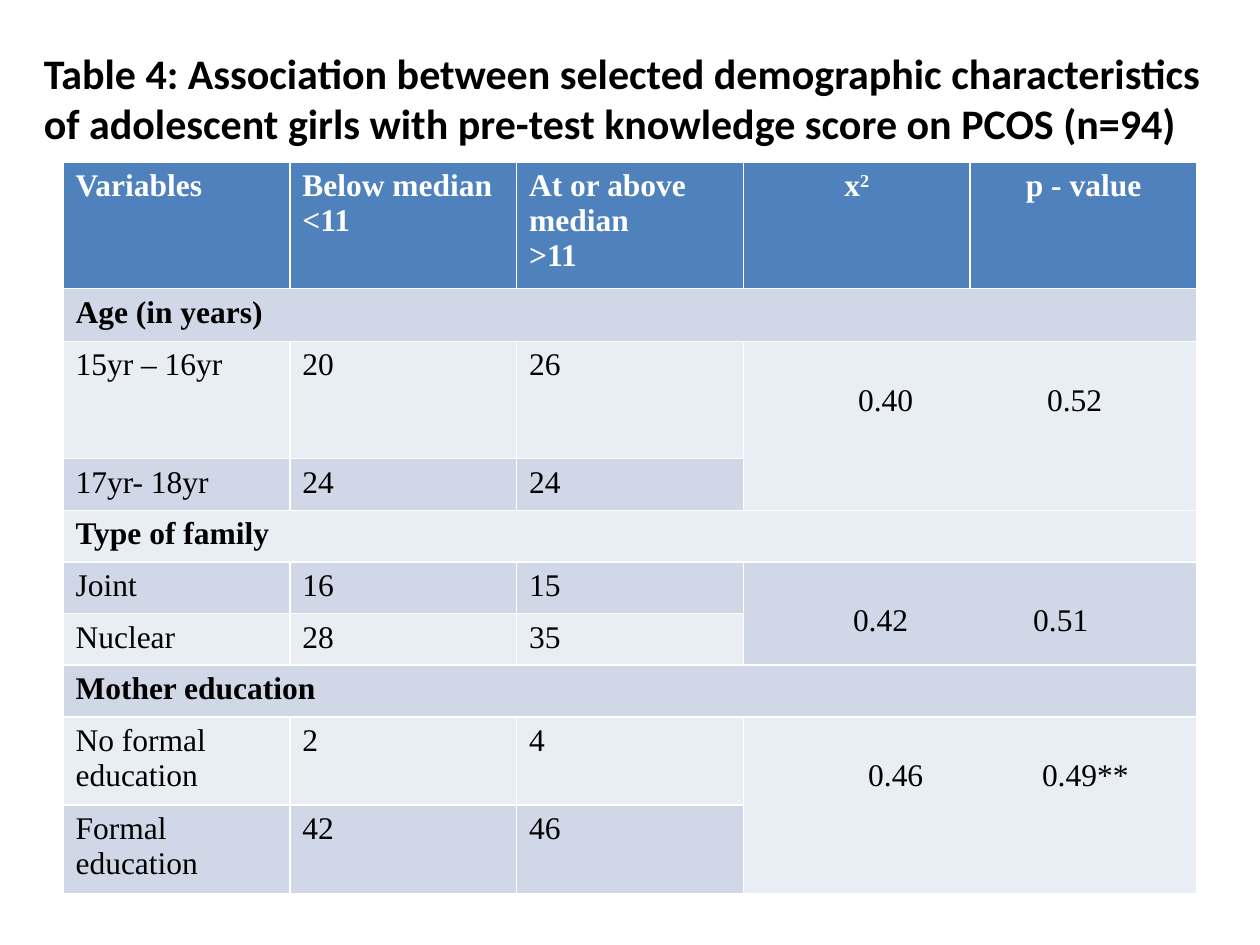
import pptx
import pptx.dml.color
import pptx.enum.text
import pptx.oxml.ns
import pptx.util
from lxml import etree

Inches = pptx.util.Inches
Pt = pptx.util.Pt
RGBColor = pptx.dml.color.RGBColor
PP_ALIGN = pptx.enum.text.PP_ALIGN
qn = pptx.oxml.ns.qn

BLACK = RGBColor(0x00, 0x00, 0x00)
WHITE = RGBColor(0xFF, 0xFF, 0xFF)
HEADER = RGBColor(0x4F, 0x81, 0xBD)
BANDS = (RGBColor(0xE9, 0xED, 0xF4), RGBColor(0xD0, 0xD8, 0xE8))

TITLE = ("Table 4: Association between selected demographic characteristics "
         "of adolescent girls with pre-test knowledge score on PCOS (n=94)")
ROWS = [
    ["Variables", "Below median <11", "At or above median\n>11", "x", "p - value"],
    ["Age (in years)"],
    ["15yr – 16yr", "20", "26"],
    ["17yr- 18yr", "24", "24"],
    ["Type of family"],
    ["Joint", "16", "15"],
    ["Nuclear", "28", "35"],
    ["Mother education"],
    ["No formal education", "2", "4"],
    ["Formal education", "42", "46"],
]
ROW_HEIGHTS = [0.93, 0.42, 0.93, 0.41, 0.41, 0.41, 0.41, 0.41, 0.65, 0.65]
RESULTS = {
    2: (("0.40", 0.81), ("0.52", 2.31)),
    5: (("0.42", 0.77), ("0.51", 2.2)),
    8: (("0.46", 0.89), ("0.49**", 2.27)),
}


class SlideBuilder:
    title_font = "Calibri"
    table_font = "Times New Roman"
    title_size = Pt(24)
    table_size = Pt(18)

    def __init__(self, slide):
        self.s = slide

    def style(self, p, name, size, color, bold):
        p.font.name = name
        p.font.size = size
        p.font.color.rgb = color
        p.font.bold = bold

    def title(self, text, left, top, width, height):
        sp = self.s.shapes.add_textbox(
            Inches(left), Inches(top), Inches(width), Inches(height))
        tf = sp.text_frame
        tf.word_wrap = True
        tf.vertical_anchor = pptx.enum.text.MSO_ANCHOR.MIDDLE
        p = tf.paragraphs[0]
        p.text = text
        self.style(p, self.title_font, self.title_size, BLACK, True)

    def table(self, left, top, width, heights, columns):
        sp = self.s.shapes.add_table(
            len(heights), columns, Inches(left), Inches(top),
            Inches(width), Inches(sum(heights)))
        table = sp.table
        for i, height in enumerate(heights):
            table.rows[i].height = Inches(height)
            for cell in table.rows[i].cells:
                cell.fill.solid()
                cell.fill.fore_color.rgb = HEADER if i == 0 else BANDS[i % 2]
        return table

    def cell(self, cell, text, color=BLACK, bold=False, align=PP_ALIGN.LEFT):
        cell.text = text
        for p in cell.text_frame.paragraphs:
            p.alignment = align
            self.style(p, self.table_font, self.table_size, color, bold)

    def superscript(self, p, text):
        r = p.add_run()
        r.text = text
        r.font._element.set("baseline", "30000")

    def results(self, table, row, values):
        cell = table.cell(row, 3)
        cell.merge(table.cell(row + 1, 4))
        self.cell(cell, "")
        cell.margin_top = Inches(0.33)
        p = cell.text_frame.paragraphs[0]
        p.add_run().text = "".join("\t" + value for value, _ in values)
        pPr = p._p.get_or_add_pPr()
        tabs = etree.Element(qn("a:tabLst"))
        for _, position in values:
            etree.SubElement(tabs, qn("a:tab"), pos=str(Inches(position)), algn="l")
        pPr.insert(0, tabs)


def main():
    prs = pptx.Presentation()
    prs.slide_width = Inches(10)
    prs.slide_height = Inches(7.5)
    b = SlideBuilder(prs.slides.add_slide(prs.slide_layouts[6]))
    b.title(TITLE, 0.25, 0, 9.5, 1.55)
    table = b.table(0.5, 1.29, 9, ROW_HEIGHTS, 5)

    for i, row in enumerate(ROWS):
        section = len(row) == 1
        if section:
            table.cell(i, 0).merge(table.cell(i, 4))
        for j, text in enumerate(row):
            b.cell(table.cell(i, j), text,
                   color=WHITE if i == 0 else BLACK,
                   bold=i == 0 or section,
                   align=PP_ALIGN.CENTER if j >= 3 else PP_ALIGN.LEFT)
    b.superscript(table.cell(0, 3).text_frame.paragraphs[0], "2")

    for row, values in RESULTS.items():
        b.results(table, row, values)
    prs.save("out.pptx")


if __name__ == "__main__":
    main()
